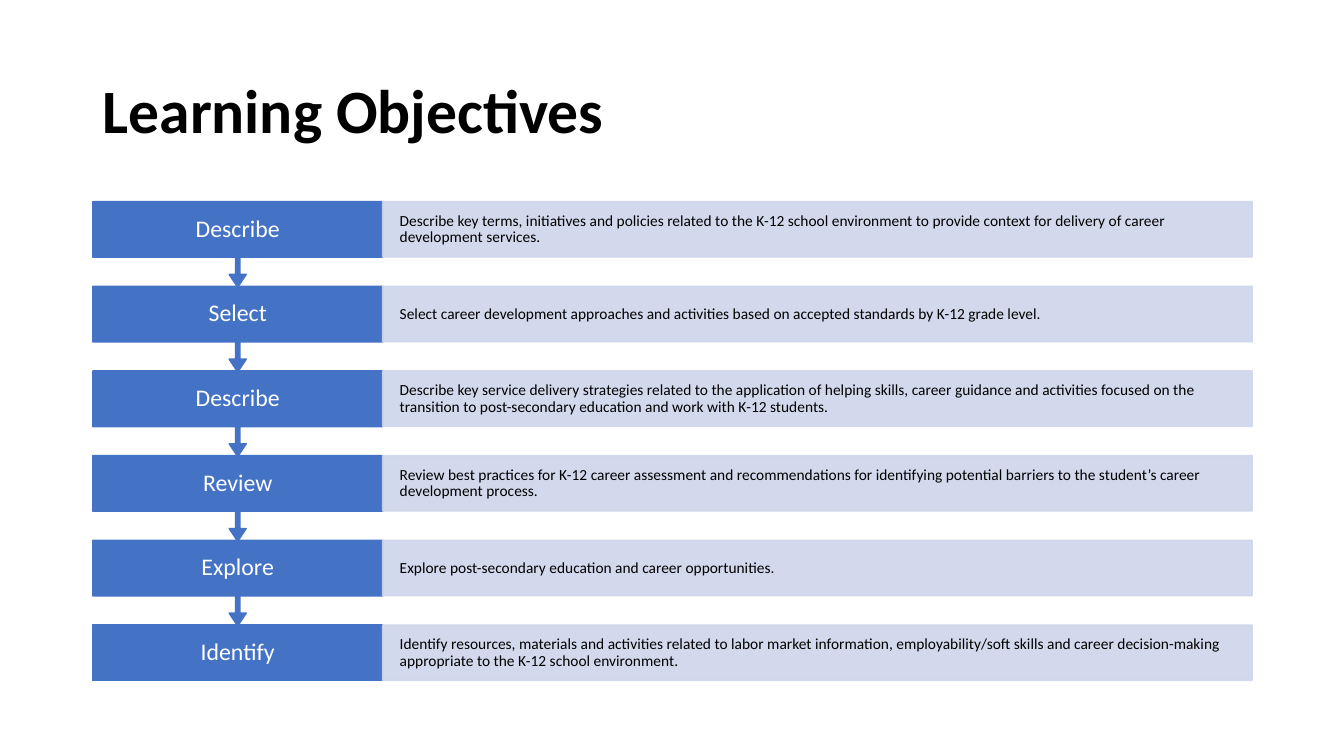
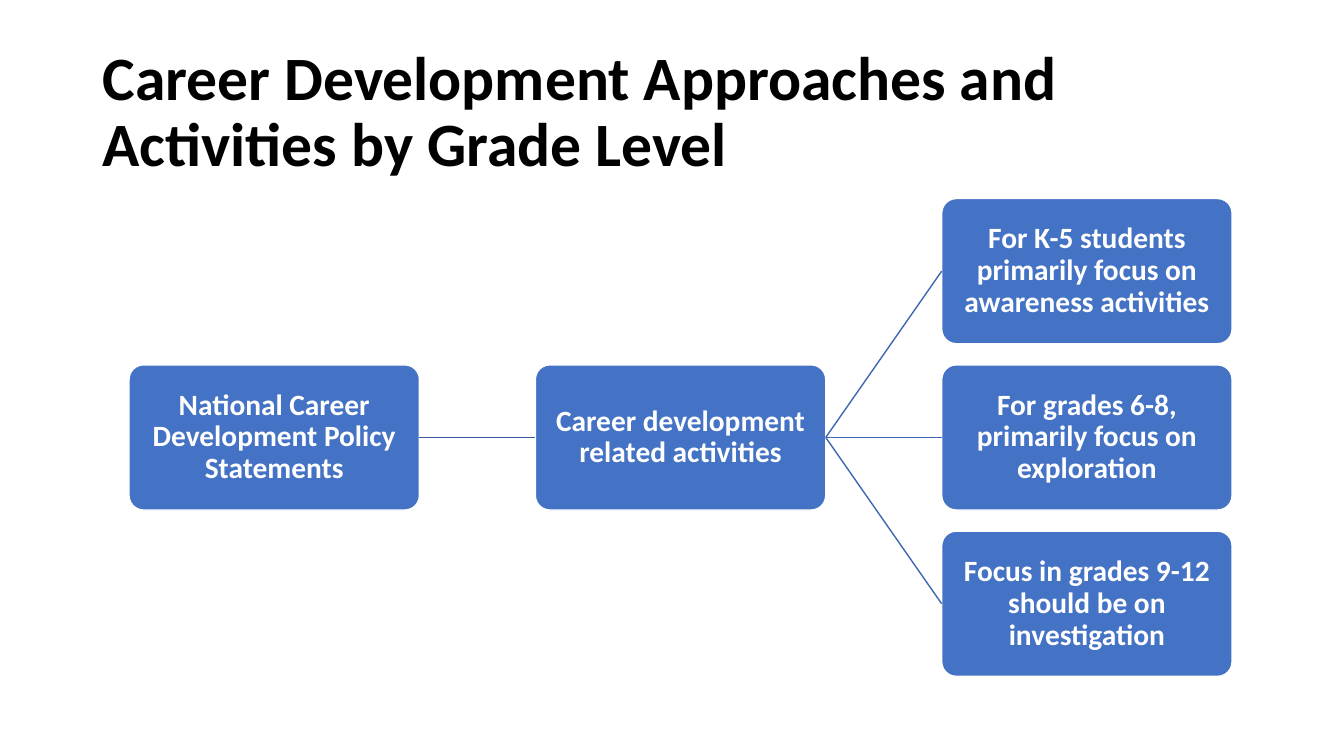
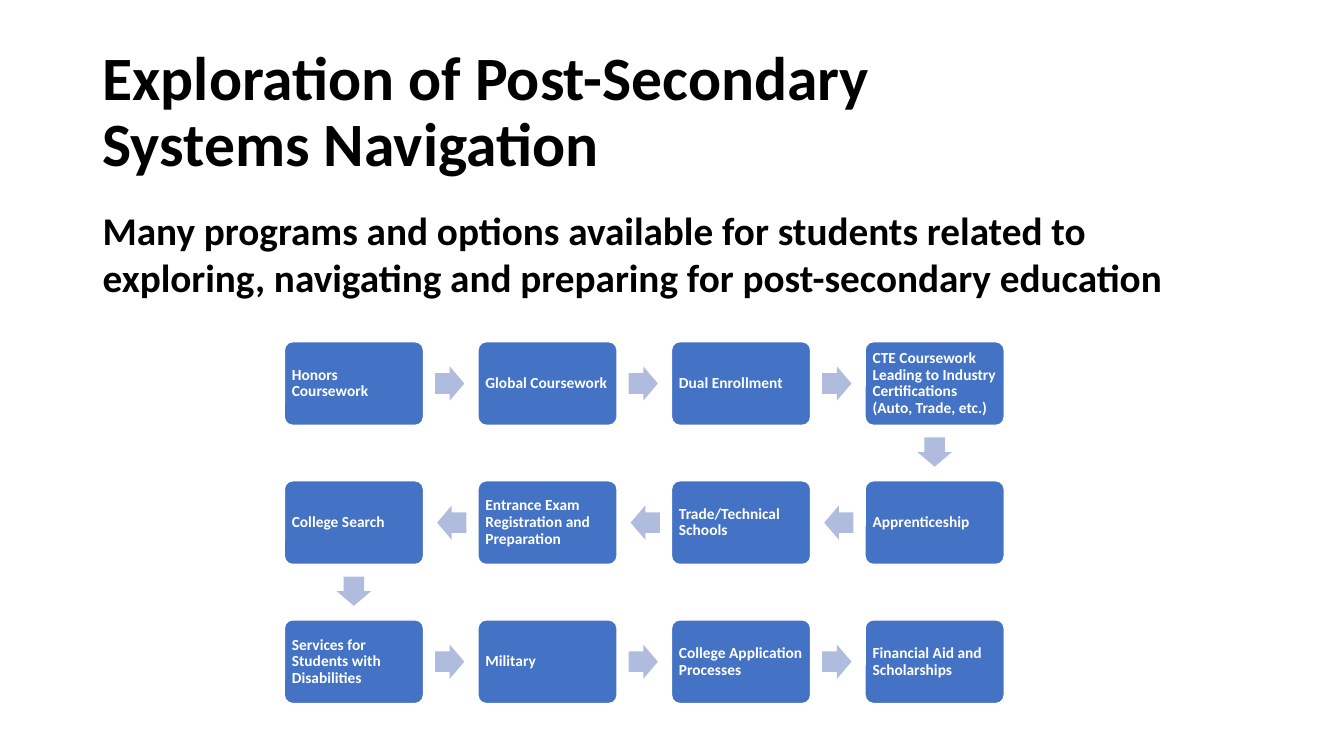
from lxml.etree import SubElement
from pptx import Presentation
from pptx.dml.color import RGBColor
from pptx.enum.shapes import MSO_CONNECTOR, MSO_SHAPE
from pptx.enum.text import MSO_ANCHOR, PP_ALIGN
from pptx.oxml.ns import qn
from pptx.util import Inches, Pt

# Shared style
BLUE = RGBColor(0x44, 0x72, 0xC4)
PALE_BLUE = RGBColor(0xCF, 0xD5, 0xEA)
ARROW_BLUE = RGBColor(0xB0, 0xBC, 0xDE)
TRUNK_BLUE = RGBColor(0x36, 0x5B, 0x9D)
BRANCH_BLUE = RGBColor(0x3E, 0x67, 0xB2)
WHITE = RGBColor(0xFF, 0xFF, 0xFF)
BLACK = RGBColor(0, 0, 0)
FONT = "Calibri"
MARGIN, CONTENT_W = 0.92, 11.5

# Content
OBJECTIVES = [
    ("Describe", "Describe key terms, initiatives and policies related to the K-12 school environment "
                 "to provide context for delivery of career development services."),
    ("Select", "Select career development approaches and activities based on accepted standards "
               "by K-12 grade level."),
    ("Describe", "Describe key service delivery strategies related to the application of helping skills, "
                 "career guidance and activities focused on the transition to post-secondary education "
                 "and work with K-12 students."),
    ("Review", "Review best practices for K-12 career assessment and recommendations for identifying "
               "potential barriers to the student’s career development process."),
    ("Explore", "Explore post-secondary education and career opportunities."),
    ("Identify", "Identify resources, materials and activities related to labor market information, "
                 "employability/soft skills and career decision-making appropriate to the K-12 "
                 "school environment."),
]
POLICY = "National Career Development Policy Statements"
ACTIVITIES = "Career development related activities"
GRADE_FOCUS = [
    "For K-5 students primarily focus on awareness activities",
    "For grades 6-8, primarily focus on exploration",
    "Focus in grades 9-12 should be on investigation",
]
PROGRAM_INTRO = ("Many programs and options available for students related to exploring, "
                 "navigating and preparing for post-secondary education")
PROGRAMS = [
    "Honors Coursework", "Global Coursework", "Dual Enrollment",
    "CTE Coursework Leading to Industry Certifications (Auto, Trade, etc.)",
    "Apprenticeship", "Trade/Technical Schools",
    "Entrance Exam Registration and Preparation", "College Search",
    "Services for Students with Disabilities", "Military",
    "College Application Processes", "Financial Aid and Scholarships",
]


def write(shape, text, size, color, bold=False, align=PP_ALIGN.LEFT,
          anchor=MSO_ANCHOR.MIDDLE, inset=(0.1, 0.05), spacing=0.9):
    frame = shape.text_frame
    frame.word_wrap = True
    frame.vertical_anchor = anchor
    frame.margin_left = frame.margin_right = Inches(inset[0])
    frame.margin_top = frame.margin_bottom = Inches(inset[1])
    paragraph = frame.paragraphs[0]
    paragraph.text = text
    paragraph.alignment = align
    paragraph.line_spacing = spacing
    font = paragraph.font
    font.name, font.size, font.bold = FONT, Pt(size), bold
    font.color.rgb = color


def add_text(slide, top, height, text, size, **style):
    box = slide.shapes.add_textbox(*map(Inches, (MARGIN, top, CONTENT_W, height)))
    write(box, text, size, BLACK, bold=True, **style)


def add_block(slide, kind, box, fill, line=None, adjust=()):
    block = slide.shapes.add_shape(kind, *map(Inches, box))
    block.shadow.inherit = False
    block.fill.solid()
    block.fill.fore_color.rgb = fill
    if line is None:
        block.line.fill.background()
    else:
        block.line.color.rgb = line
        block.line.width = Pt(1)
    for i, value in enumerate(adjust):
        block.adjustments[i] = value
    return block


def add_card(slide, box, text, size, align, inset):
    card = add_block(slide, MSO_SHAPE.ROUNDED_RECTANGLE, box, BLUE, WHITE, [0.1])
    write(card, text, size, WHITE, bold=True, align=align, inset=(inset, inset))
    return card


def link(slide, start, end, color):
    line = slide.shapes.add_connector(MSO_CONNECTOR.STRAIGHT, 0, 0, 0, 0)
    line.begin_connect(start, 3)
    line.end_connect(end, 1)
    line.line.color.rgb = color
    line.line.width = Pt(1)
    SubElement(line._element.spPr, qn("a:effectLst"))


def add_slide(deck, title):
    slide = deck.slides.add_slide(deck.slide_layouts[6])
    add_text(slide, 0.4, 1.45, title, 44)
    return slide


def build_objectives(deck):
    slide = add_slide(deck, "Learning Objectives")
    top, pitch, row_h = 2, 0.84, 0.55
    verb_w = CONTENT_W / 4
    for i, (verb, objective) in enumerate(OBJECTIVES):
        y = top + i * pitch
        # Verb box, with an arrow down to the next one
        if i < len(OBJECTIVES) - 1:
            step = add_block(slide, MSO_SHAPE.DOWN_ARROW_CALLOUT, (MARGIN, y, verb_w, 0.85),
                             BLUE, BLUE, [0.05, 0.1, 0.15, 0.65])
        else:
            step = add_block(slide, MSO_SHAPE.RECTANGLE, (MARGIN, y, verb_w, row_h), BLUE, BLUE)
        write(step, verb, 17, WHITE, align=PP_ALIGN.CENTER, inset=(0.2, 0))
        # Explanation, slightly transparent
        panel = add_block(slide, MSO_SHAPE.RECTANGLE,
                          (MARGIN + verb_w, y, CONTENT_W - verb_w, row_h), PALE_BLUE, PALE_BLUE)
        for tint in list(panel._element.spPr.iter(qn("a:srgbClr"))):
            SubElement(tint, qn("a:alpha"), val="90000")
        write(panel, objective, 11, BLACK, inset=(0.17, 0))


def build_approaches(deck):
    slide = add_slide(deck, "Career Development Approaches and Activities by Grade Level")
    left, top, col_pitch, row_pitch = 1.28, 1.97, 4.03, 1.65

    def card(col, row, text):
        box = (left + col * col_pitch, top + row * row_pitch, 2.88, 1.44)
        return add_card(slide, box, text, 21, PP_ALIGN.CENTER, 0.01)

    policy = card(0, 1, POLICY)
    activities = card(1, 1, ACTIVITIES)
    link(slide, policy, activities, TRUNK_BLUE)
    for row, focus in enumerate(GRADE_FOCUS):
        link(slide, activities, card(2, row, focus), BRANCH_BLUE)


def build_programs(deck):
    slide = add_slide(deck, "Exploration of Post-Secondary\vSystems Navigation")
    add_text(slide, 2, 1.2, PROGRAM_INTRO, 28, anchor=MSO_ANCHOR.TOP, spacing=1.0)
    columns, left, top = 4, 2.82, 3.39
    col_pitch, row_pitch, card_w, card_h = 1.92, 1.38, 1.38, 0.83
    arrow_w, arrow_h, arrow_shift = 0.29, 0.34, 0.01

    def cell(i):
        # Every second row runs from right to left
        row, col = divmod(i, columns)
        return (columns - 1 - col if row % 2 else col), row

    for i, program in enumerate(PROGRAMS):
        col, row = cell(i)
        x, y = left + col * col_pitch, top + row * row_pitch
        add_card(slide, (x, y, card_w, card_h), program, 11, PP_ALIGN.LEFT, 0.05)
        if i == len(PROGRAMS) - 1:
            break
        # Arrow halfway to the next card, a touch nearer to this one
        next_col, next_row = cell(i + 1)
        dx, dy = next_col - col, next_row - row
        center_x = x + card_w / 2 + dx * (col_pitch / 2 - arrow_shift)
        center_y = y + card_h / 2 + dy * (row_pitch / 2 - arrow_shift)
        arrow = add_block(slide, MSO_SHAPE.RIGHT_ARROW,
                          (center_x - arrow_w / 2, center_y - arrow_h / 2, arrow_w, arrow_h),
                          ARROW_BLUE, adjust=[0.6, 0.5])
        arrow.rotation = 90 if dy else (180 if dx < 0 else 0)


def main():
    deck = Presentation()
    deck.slide_width, deck.slide_height = Inches(13.33), Inches(7.5)
    build_objectives(deck)
    build_approaches(deck)
    build_programs(deck)
    deck.save("out.pptx")


if __name__ == "__main__":
    main()
